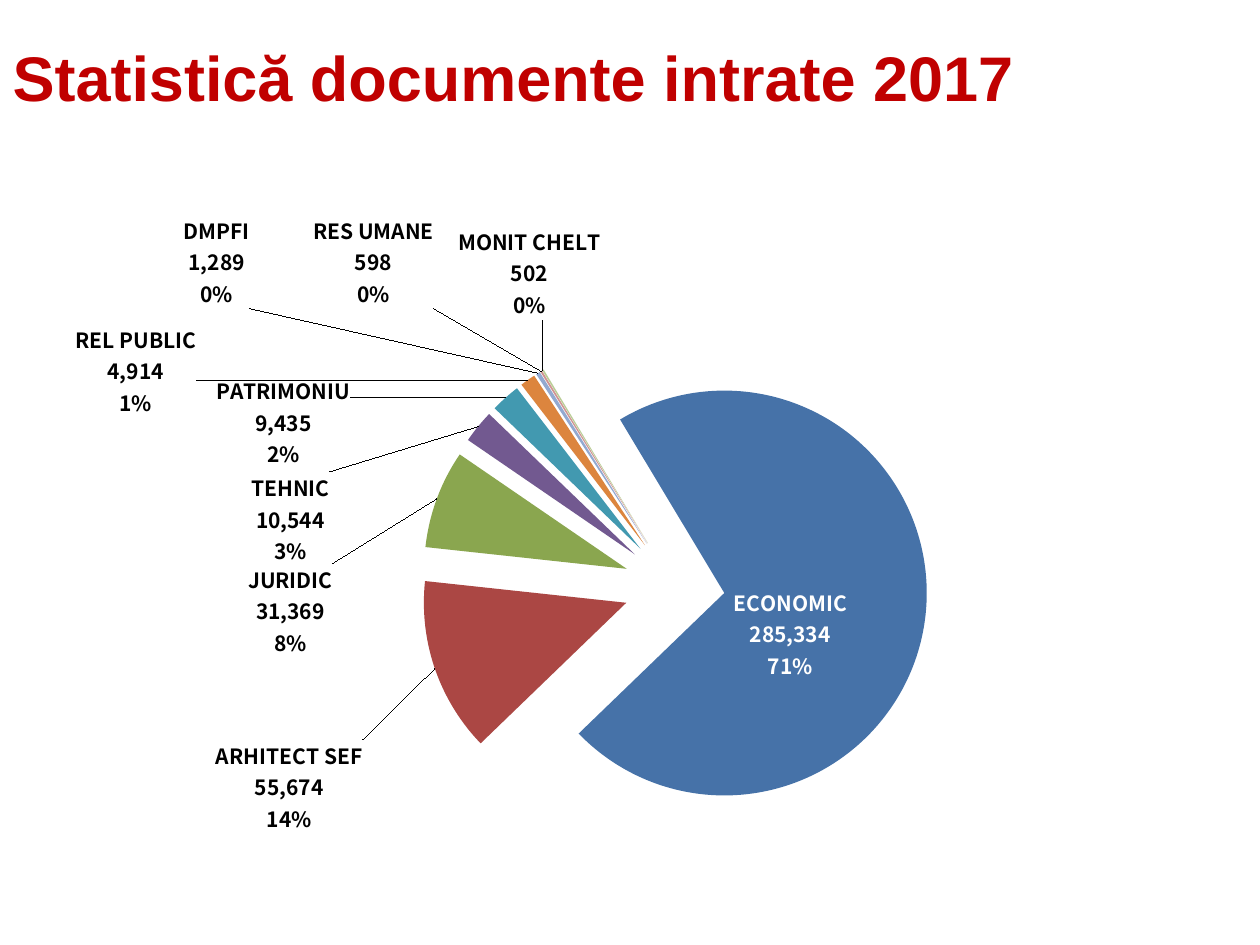
from pptx import Presentation
from pptx.chart.data import CategoryChartData
from pptx.dml.color import RGBColor
from pptx.enum.chart import XL_CHART_TYPE
from pptx.enum.text import MSO_ANCHOR, PP_ALIGN
from pptx.oxml import parse_xml
from pptx.oxml.ns import qn
from pptx.util import Inches, Pt

PIE = XL_CHART_TYPE.PIE
MIDDLE = MSO_ANCHOR.MIDDLE
LEFT = PP_ALIGN.LEFT

TITLE = "Statistică documente intrate 2017"
TITLE_BOX = (0, 0.02, 10, 1.17)
CHART_BOX = (0.12, 1.39, 9.76, 5.51)
PLOT_PERCENT = {"x": 33, "y": 22.8, "w": 41.2, "h": 72.9}
EXPLOSION, START_ANGLE = 25, 329
CHART_FONT = "Noto Sans CJK KR"
INSIDE, OUTSIDE = ("ctr", "FFFFFF"), ("outEnd", "000000")
SLICES = [
    ("ECONOMIC", 285334, "4672A8", INSIDE, (-2.8, 3.9)),
    ("ARHITECT SEF", 55674, "AB4744", OUTSIDE, (-5.3, 9.9)),
    ("JURIDIC", 31369, "8AA64F", OUTSIDE, (-7.9, 23.3)),
    ("TEHNIC", 10544, "725990", OUTSIDE, (-11.6, 20.8)),
    ("PATRIMONIU", 9435, "4299B0", OUTSIDE, (-12.2, 11.1)),
    ("REL PUBLIC", 4914, "DC853E", OUTSIDE, (-26.6, 6.3)),
    ("DMPFI", 1289, "93A9D0", OUTSIDE, (-23.1, -8.4)),
    ("RES UMANE", 598, "D09493", OUTSIDE, (-8.4, -8.1)),
    ("MONIT CHELT", 502, "BACD96", OUTSIDE, (5, -6.3)),
]
NS = ('xmlns:c="http://schemas.openxmlformats.org/drawingml/2006/chart" '
      'xmlns:a="http://schemas.openxmlformats.org/drawingml/2006/main"')


def rgb(value):
    return RGBColor.from_string(value)


def chart_xml(tag, value):
    return parse_xml(f'<c:{tag} {NS} val="{value}"/>')


def manual_layout(modes, percents):
    inner = modes + "".join(f'<c:{k} val="{round(v / 100, 4)}"/>'
                            for k, v in percents.items())
    return f"<c:layout {NS}><c:manualLayout>{inner}</c:manualLayout></c:layout>"


def label_format(position, color):
    flags = {"LegendKey": 0, "Val": 1, "CatName": 1, "SerName": 0,
             "Percent": 1, "BubbleSize": 0}
    shows = "".join(f'<c:show{k} val="{v}"/>' for k, v in flags.items())
    return (
        '<c:spPr><a:noFill/><a:ln><a:noFill/></a:ln></c:spPr>'
        '<c:txPr><a:bodyPr/><a:p><a:pPr><a:defRPr sz="1200" b="1">'
        f'<a:solidFill><a:srgbClr val="{color}"/></a:solidFill>'
        f'<a:latin typeface="{CHART_FONT}"/></a:defRPr></a:pPr>'
        '<a:endParaRPr/></a:p></c:txPr>'
        f'<c:dLblPos val="{position}"/>{shows}<c:separator>\n</c:separator>')


def point_label(index, style, offset):
    layout = manual_layout("", dict(zip("xy", offset)))
    return (f'<c:dLbl><c:idx val="{index}"/>{layout}'
            f'{label_format(*style)}</c:dLbl>')


def add_title(slide):
    title = slide.shapes.title
    title.left, title.top, title.width, title.height = map(Inches, TITLE_BOX)
    tf = title.text_frame
    tf.word_wrap = True
    tf.vertical_anchor = MIDDLE
    p = tf.paragraphs[0]
    p.alignment = LEFT
    r = p.add_run()
    r.text = TITLE
    for name, value in {"name": "Arial", "size": Pt(36), "bold": True}.items():
        setattr(r.font, name, value)
    r.font.color.rgb = rgb("C00000")


def add_pie(slide):
    data = CategoryChartData(number_format="#,##0")
    data.categories = [s[0] for s in SLICES]
    data.add_series("Series 1", [s[1] for s in SLICES])
    chart = slide.shapes.add_chart(PIE, *map(Inches, CHART_BOX), data).chart
    chart.has_legend = chart.has_title = False
    chart.font.name, chart.font.size = CHART_FONT, Pt(10)
    chart.font.color.rgb = rgb("000000")

    plot = chart.plots[0]
    plot.vary_by_categories = True
    series = plot.series[0]
    ser = series._element
    labels = ""
    for i, (_, _, color, style, offset) in enumerate(SLICES):
        fmt = series.points[i].format
        fmt.fill.solid()
        fmt.fill.fore_color.rgb = rgb(color)
        fmt.line.fill.background()
        labels += point_label(i, style, offset)
    points = ser.findall(qn("c:dPt"))
    for point in points:
        point.find(qn("c:spPr")).addprevious(chart_xml("explosion", EXPLOSION))
    points[0].addprevious(chart_xml("explosion", EXPLOSION))
    ser.find(qn("c:cat")).addprevious(parse_xml(
        f'<c:dLbls {NS}>{labels}{label_format(*OUTSIDE)}'
        '<c:showLeaderLines val="1"/></c:dLbls>'))

    pie = ser.getparent()
    for old in pie.findall(qn("c:firstSliceAng")):
        pie.remove(old)
    pie.append(chart_xml("firstSliceAng", START_ANGLE))
    area = pie.getparent()
    for old in area.findall(qn("c:layout")):
        area.remove(old)
    modes = ('<c:layoutTarget val="inner"/><c:xMode val="edge"/>'
             '<c:yMode val="edge"/>')
    area.insert(0, parse_xml(manual_layout(modes, PLOT_PERCENT)))


def main():
    prs = Presentation()
    prs.slide_width, prs.slide_height = Inches(10), Inches(7.5)
    slide = prs.slides.add_slide(prs.slide_layouts[5])
    add_title(slide)
    add_pie(slide)
    prs.save("out.pptx")


if __name__ == "__main__":
    main()
